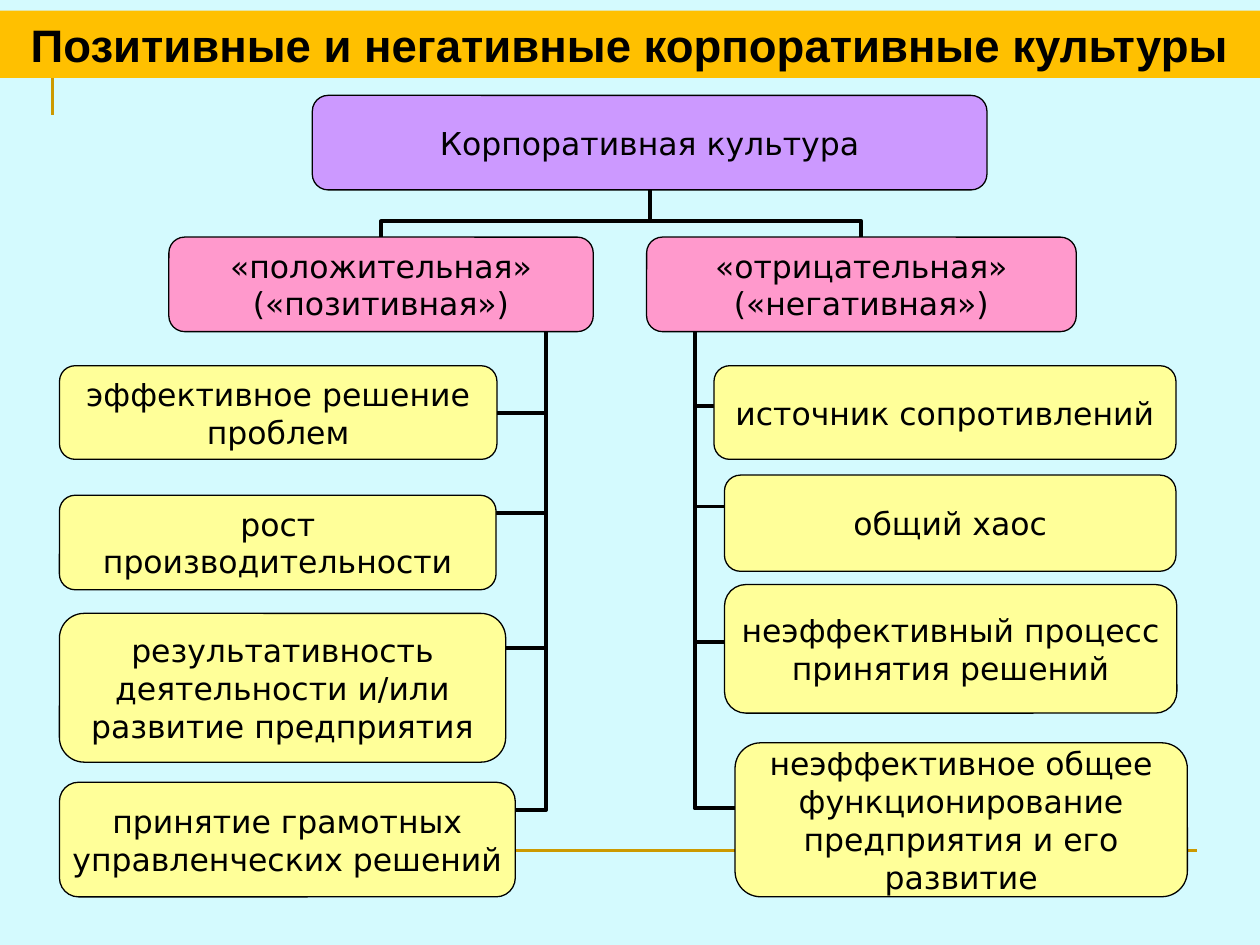
from pptx import Presentation
from pptx.dml.color import RGBColor
from pptx.enum.shapes import MSO_CONNECTOR, MSO_SHAPE
from pptx.enum.text import MSO_ANCHOR, PP_ALIGN
from pptx.oxml.ns import qn
from pptx.util import Pt

STRAIGHT, ELBOW = MSO_CONNECTOR.STRAIGHT, MSO_CONNECTOR.ELBOW
ROUNDED = MSO_SHAPE.ROUNDED_RECTANGLE
MIDDLE, CENTER = MSO_ANCHOR.MIDDLE, PP_ALIGN.CENTER

BLACK, GOLD, PURPLE, PINK, YELLOW = "000000", "CC9900", "CC99FF", "FF99CC", "FFFF99"
TITLE = "Позитивные и негативные корпоративные культуры"

# Boxes are (left, top, width, height) in points
ROOT = ("Корпоративная культура", (178.5, 54.5, 385.5, 54))
ROOT_X, BUS_Y = 371.5, 126.5

# Each leaf: text, box, height at which its connector joins
BRANCHES = [
    {"text": "«положительная» («позитивная»)", "box": (96.5, 135.5, 242.5, 54),
     "trunk_x": 312, "leaves": [
         ("эффективное решение проблем", (34, 209, 250, 53.5), 236),
         ("рост производительности", (34, 283, 249.5, 54), 293),
         ("результативность деятельности и/или развитие предприятия",
          (34, 350.5, 255, 85), 370.5),
         ("принятие грамотных управленческих решений",
          (34, 447, 260.5, 65.5), 463)]},
    {"text": "«отрицательная» («негативная»)", "box": (369.5, 135.5, 245.5, 54),
     "trunk_x": 397, "leaves": [
         ("источник сопротивлений", (408, 209, 264, 53.5), 232),
         ("общий хаос", (414, 271.5, 258, 55), 289.5),
         ("неэффективный процесс принятия решений",
          (414, 334, 258.5, 73.5), 367),
         ("неэффективное общее функционирование предприятия и его развитие",
          (420, 424.5, 258.5, 88), 462)]},
]


def paint(color_format, color):
    color_format.rgb = RGBColor.from_string(color)


def fill(fill_format, color):
    fill_format.solid()
    paint(fill_format.fore_color, color)


def write(tf, text, font, size, bold=False):
    tf.word_wrap = True
    tf.vertical_anchor = MIDDLE
    p = tf.paragraphs[0]
    p.alignment = CENTER
    r = p.add_run()
    r.text = text
    r.font.name, r.font.size, r.font.bold = font, Pt(size), bold
    paint(r.font.color, BLACK)


def add_line(slide, kind, start, end, color=BLACK, width=2.25):
    """Elbows run horizontally first, then turn once."""
    c = slide.shapes.add_connector(kind, *map(Pt, start + end))
    paint(c.line.color, color)
    c.line.width = Pt(width)
    sp_pr = c._element.spPr
    if kind == ELBOW:
        sp_pr.find(qn("a:prstGeom")).set("prst", "bentConnector2")
    sp_pr.append(sp_pr.makeelement(qn("a:effectLst"), {}))


def add_box(slide, text, box, color):
    sp = slide.shapes.add_shape(ROUNDED, *map(Pt, box))
    sp.shadow.inherit = False
    fill(sp.fill, color)
    paint(sp.line.color, BLACK)
    sp.line.width = Pt(0.75)
    tf = sp.text_frame
    tf.margin_left = tf.margin_right = tf.margin_top = tf.margin_bottom = 0
    write(tf, text, "DejaVu Sans", 18)


def main():
    prs = Presentation()
    prs.slide_width, prs.slide_height = Pt(720), Pt(540)
    slide = prs.slides.add_slide(prs.slide_layouts[5])
    fill(slide.background.fill, "D4FAFE")

    add_line(slide, STRAIGHT, (30, 18), (30, 66), GOLD, 1.5)
    add_line(slide, STRAIGHT, (36, 486), (684, 486), GOLD, 1.5)

    root_text, root_box = ROOT
    add_line(slide, STRAIGHT, (ROOT_X, root_box[1] + root_box[3]), (ROOT_X, BUS_Y))
    for branch in BRANCHES:
        left, top, width, height = branch["box"]
        trunk_x = branch["trunk_x"]
        add_line(slide, ELBOW, (ROOT_X, BUS_Y), (left + width / 2, top))
        for _, (x, _, w, _), join_y in branch["leaves"]:
            edge = x + w if x < trunk_x else x
            add_line(slide, ELBOW, (edge, join_y), (trunk_x, top + height))

    add_box(slide, root_text, root_box, PURPLE)
    for branch in BRANCHES:
        add_box(slide, branch["text"], branch["box"], PINK)
        for text, box, _ in branch["leaves"]:
            add_box(slide, text, box, YELLOW)

    title = slide.shapes.title
    title.left, title.top, title.width, title.height = map(Pt, (0, 6, 720, 38.5))
    fill(title.fill, "FFC000")
    write(title.text_frame, TITLE, "Arial", 26, bold=True)
    slide.shapes._spTree.append(title._element)  # in front of the gold line

    prs.save("out.pptx")


if __name__ == "__main__":
    main()
